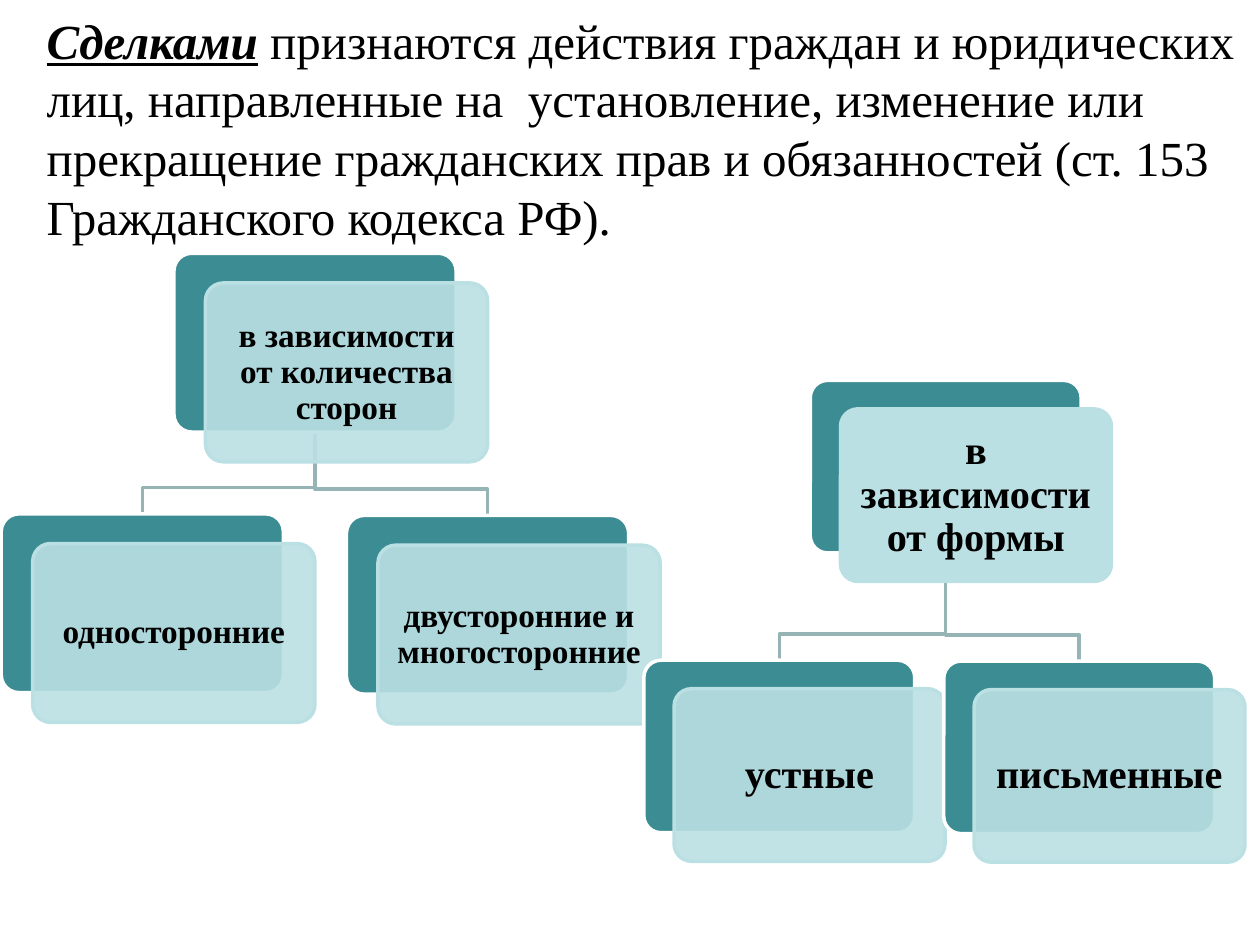
from lxml import etree
from pptx import Presentation
from pptx.dml.color import RGBColor
from pptx.enum.shapes import MSO_SHAPE
from pptx.enum.text import MSO_ANCHOR, PP_ALIGN
from pptx.oxml.ns import qn
from pptx.util import Pt

ROUNDED = MSO_SHAPE.ROUNDED_RECTANGLE
MIDDLE = MSO_ANCHOR.MIDDLE
CENTER = PP_ALIGN.CENTER
FONT = "Times New Roman"
TEAL, PALE, LINK, WHITE, BLACK = "3C8C93", "BBE0E3", "96B3B6", "FFFFFF", "000000"


def color(value):
    return RGBColor.from_string(value)


def add_card(shapes, left, top, width, height, fill, outline):
    card = shapes.add_shape(ROUNDED, Pt(left), Pt(top), Pt(width), Pt(height))
    card.shadow.inherit = False
    card.adjustments[0] = 0.1
    card.fill.solid()
    card.fill.fore_color.rgb = color(fill)
    card.line.color.rgb = color(outline)
    card.line.width = Pt(2)
    return card


deck = Presentation()
deck.slide_width, deck.slide_height = Pt(720), Pt(540)
page = deck.slides.add_slide(deck.slide_layouts[6])

definition = page.shapes.add_textbox(Pt(19.6), Pt(0), Pt(700.4), Pt(146))
frame = definition.text_frame
frame.word_wrap = True
frame.vertical_anchor = MIDDLE
para = frame.paragraphs[0]
para.font.name = FONT
para.font.size = Pt(28)
para.font.color.rgb = color(BLACK)
term = para.add_run()
term.text = "Сделками"
term.font.bold = term.font.italic = term.font.underline = True
para.add_run().text = (
    " признаются действия граждан и юридических лиц, направленные на  установление, "
    "изменение или прекращение гражданских прав и обязанностей (ст. 153 Гражданского кодекса РФ)."
)

# Each tree lists its root first: label, left, top, and whether the front card is see-through.
trees = [
    {"size": (161.3, 102.2), "shift": (18, 17), "font": 19, "inset": 5.8, "nodes": [
        ("в зависимости от количества сторон", 99.4, 144.7, True),
        ("односторонние", 0.7, 293.6, True),
        ("двусторонние и многосторонние", 198, 294.5, True)]},
    {"size": (154.8, 98.6), "shift": (17.3, 16.3), "font": 23, "inset": 7, "nodes": [
        ("в зависимости от формы", 463, 217.4, False),
        ("устные", 367.9, 377.3, True),
        ("письменные", 539.3, 377.8, True)]},
]

for tree in trees:
    shapes = page.shapes.add_group_shape().shapes
    width, height = tree["size"]
    shift_x, shift_y = tree["shift"]
    root, *children = tree["nodes"]
    start_x, start_y = root[1] + width / 2, root[2] + height

    for _, left, top, _ in reversed(children):
        end_x, bend_y = left + width / 2, top - 15
        builder = shapes.build_freeform(Pt(start_x), Pt(start_y))
        corners = [(start_x, bend_y), (end_x, bend_y), (end_x, top)]
        builder.add_line_segments([(Pt(x), Pt(y)) for x, y in corners], close=False)
        branch = builder.convert_to_shape()
        branch.shadow.inherit = False
        branch.fill.background()
        branch.line.color.rgb = color(LINK)
        branch.line.width = Pt(2)

    for label, left, top, see_through in tree["nodes"]:
        add_card(shapes, left, top, width, height, TEAL, WHITE)
        front = add_card(shapes, left + shift_x, top + shift_y, width, height, PALE, PALE)
        if see_through:
            tint = front.fill._xPr.find(qn("a:solidFill"))[0]
            etree.SubElement(tint, qn("a:alpha")).set("val", "90000")
        frame = front.text_frame
        frame.word_wrap = True
        frame.vertical_anchor = MIDDLE
        frame.margin_left = frame.margin_right = Pt(tree["inset"])
        frame.margin_top = frame.margin_bottom = Pt(tree["inset"])
        para = frame.paragraphs[0]
        para.text = label
        para.alignment = CENTER
        para.line_spacing = 0.9
        para.font.name = FONT
        para.font.size = Pt(tree["font"])
        para.font.bold = True
        para.font.color.rgb = color(BLACK)

deck.save("out.pptx")
